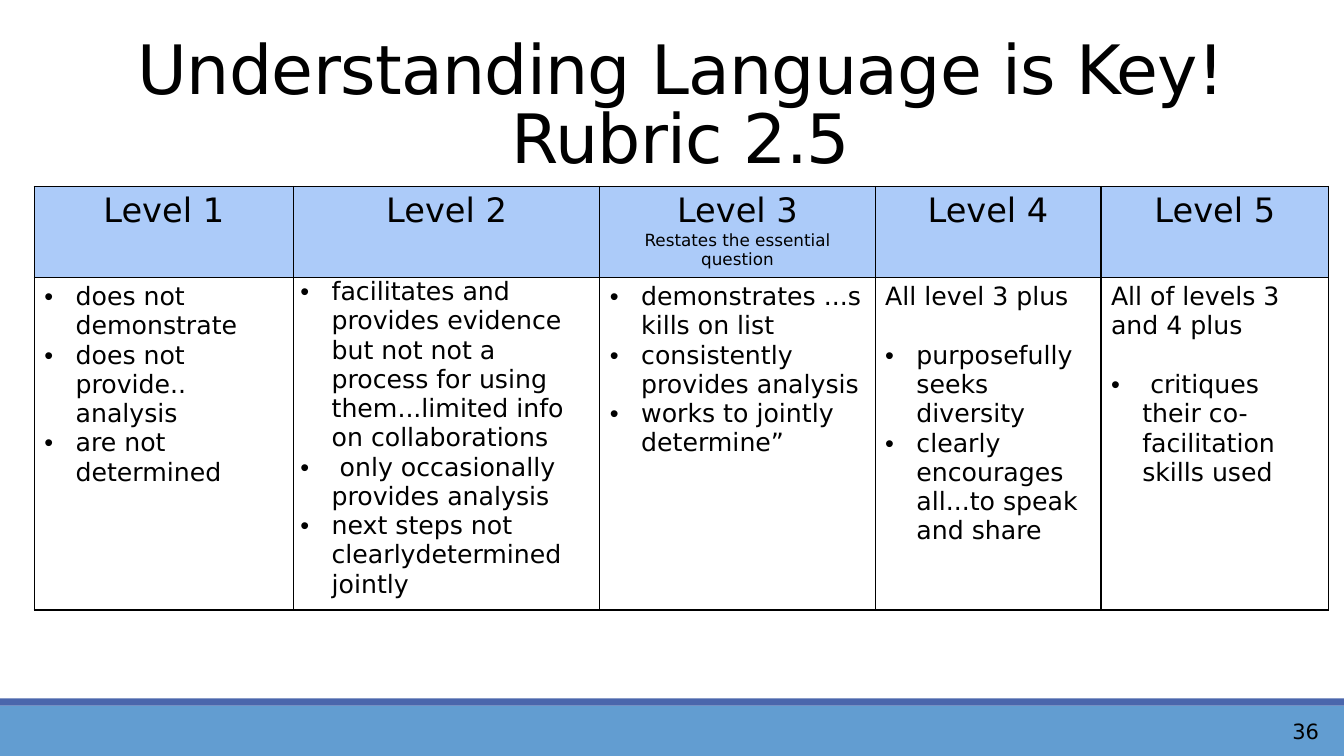
from lxml import etree
from pptx import Presentation
from pptx.dml.color import RGBColor
from pptx.enum.shapes import MSO_SHAPE
from pptx.enum.text import MSO_ANCHOR, PP_ALIGN
from pptx.oxml.ns import qn
from pptx.util import Inches, Pt

TITLE = ["Understanding Language is Key!", "Rubric 2.5"]
PAGE = "36"
LEVELS = [
    {"head": "Level 1", "bullets": [
        "does not demonstrate", "does not provide.. analysis", "are not determined"]},
    {"head": "Level 2", "tight": True, "bullets": [
        "facilitates and provides evidence but not not a process for using "
        "them...limited info on collaborations",
        " only occasionally provides analysis",
        "next steps not clearlydetermined jointly"]},
    {"head": "Level 3", "sub": "Restates the essential question", "bullets": [
        "demonstrates ...skills on list", "consistently provides analysis",
        "works to jointly determine”"]},
    {"head": "Level 4", "intro": "All level 3 plus", "bullets": [
        "purposefully seeks diversity", "clearly encourages all...to speak and share"]},
    {"head": "Level 5", "intro": "All of levels 3 and 4 plus", "bullets": [
        " critiques their co-facilitation skills used"]},
]
COLUMNS = [2.57, 3.04, 2.73, 2.24, 2.26]
ROWS = [0.88, 3.2]
LEFT, TABLE_TOP, WIDTH = 0.34, 1.85, 12.83
SLIDE_W, SLIDE_H = 13.33, 7.5
FONT = "DejaVu Sans"
BLACK = RGBColor(0, 0, 0)
HEADER = RGBColor(0xAC, 0xCB, 0xF9)
FOOTER = RGBColor(0x62, 0x9D, 0xD1)
STRIPE = RGBColor(0x4A, 0x66, 0xAC)
CENTER, RIGHT = PP_ALIGN.CENTER, PP_ALIGN.RIGHT
BOTTOM, MIDDLE = MSO_ANCHOR.BOTTOM, MSO_ANCHOR.MIDDLE
RECTANGLE = MSO_SHAPE.RECTANGLE


def style(p, size, align=None):
    p.font.name, p.font.size, p.font.color.rgb = FONT, Pt(size), BLACK
    p.alignment = align


def add_band(slide, top, height, color):
    sp = slide.shapes.add_shape(
        RECTANGLE, 0, Inches(top), Inches(SLIDE_W), Inches(height))
    sp.shadow.inherit = False
    sp.fill.solid()
    sp.fill.fore_color.rgb = color
    sp.line.fill.background()


def add_text(slide, box, text, size, align, anchor):
    tf = slide.shapes.add_textbox(*map(Inches, box)).text_frame
    tf.word_wrap = True
    tf.vertical_anchor = anchor
    p = tf.paragraphs[0]
    p.text = text
    style(p, size, align)
    return p


def add_borders(cell):
    tc_pr = cell._tc.get_or_add_tcPr()
    for side in ("a:lnL", "a:lnR", "a:lnT", "a:lnB"):
        ln = etree.SubElement(tc_pr, qn(side), w=str(Pt(1)))
        fill = etree.SubElement(ln, qn("a:solidFill"))
        etree.SubElement(fill, qn("a:srgbClr"), val=str(BLACK))


def fill_cell(cell, lines):
    tf = cell.text_frame
    for i, (text, size, align, bullet, gap) in enumerate(lines):
        p = tf.paragraphs[0] if i == 0 else tf.add_paragraph()
        p.text = text
        style(p, size, align)
        if gap:
            p.space_before = Pt(gap)
        if bullet:
            p_pr = p._p.get_or_add_pPr()
            p_pr.set("marL", str(Inches(0.31)))
            p_pr.set("indent", str(Inches(-0.31)))
            etree.SubElement(p_pr, qn("a:buFont"), typeface="Arial")
            etree.SubElement(p_pr, qn("a:buChar"), char="•")
            p_pr.append(p_pr.find(qn("a:defRPr")))


def add_rubric(slide):
    table = slide.shapes.add_table(
        len(ROWS), len(COLUMNS), Inches(LEFT), Inches(TABLE_TOP),
        Inches(WIDTH), Inches(sum(ROWS))).table
    table.first_row = table.horz_banding = False
    for row, height in zip(table.rows, ROWS):
        row.height = Inches(height)
    for i, (level, width) in enumerate(zip(LEVELS, COLUMNS)):
        table.columns[i].width = Inches(width)
        head, body = table.cell(0, i), table.cell(1, i)
        for cell in (head, body):
            add_borders(cell)
        head.fill.solid()
        head.fill.fore_color.rgb = HEADER
        body.fill.background()
        titles = [(level["head"], 24, CENTER, False, 0)]
        if "sub" in level:
            titles.append((level["sub"], 12, CENTER, False, 0))
        fill_cell(head, titles)
        intro = [(level["intro"], 18, None, False, 0)] if "intro" in level else []
        points = [(text, 18, None, True, 21 if intro and n == 0 else 0)
                  for n, text in enumerate(level["bullets"])]
        fill_cell(body, intro + points)
        if level.get("tight"):
            body.margin_left = body.margin_right = Inches(0.07)
            body.margin_top = body.margin_bottom = 0


def main():
    prs = Presentation()
    prs.slide_width, prs.slide_height = Inches(SLIDE_W), Inches(SLIDE_H)
    slide = prs.slides.add_slide(prs.slide_layouts[6])
    add_band(slide, 7, 0.5, FOOTER)
    add_band(slide, 6.93, 0.07, STRIPE)
    title = add_text(slide, (LEFT, 0.8, WIDTH, 1.01), "\v".join(TITLE), 48.6, CENTER, BOTTOM)
    title.line_spacing = 0.85
    for r in title.runs:
        r.font._element.set("spc", "-50")
    add_rubric(slide)
    add_text(slide, (12.46, 7.03, 0.72, 0.44), PAGE, 15, RIGHT, MIDDLE)
    prs.save("out.pptx")


if __name__ == "__main__":
    main()
